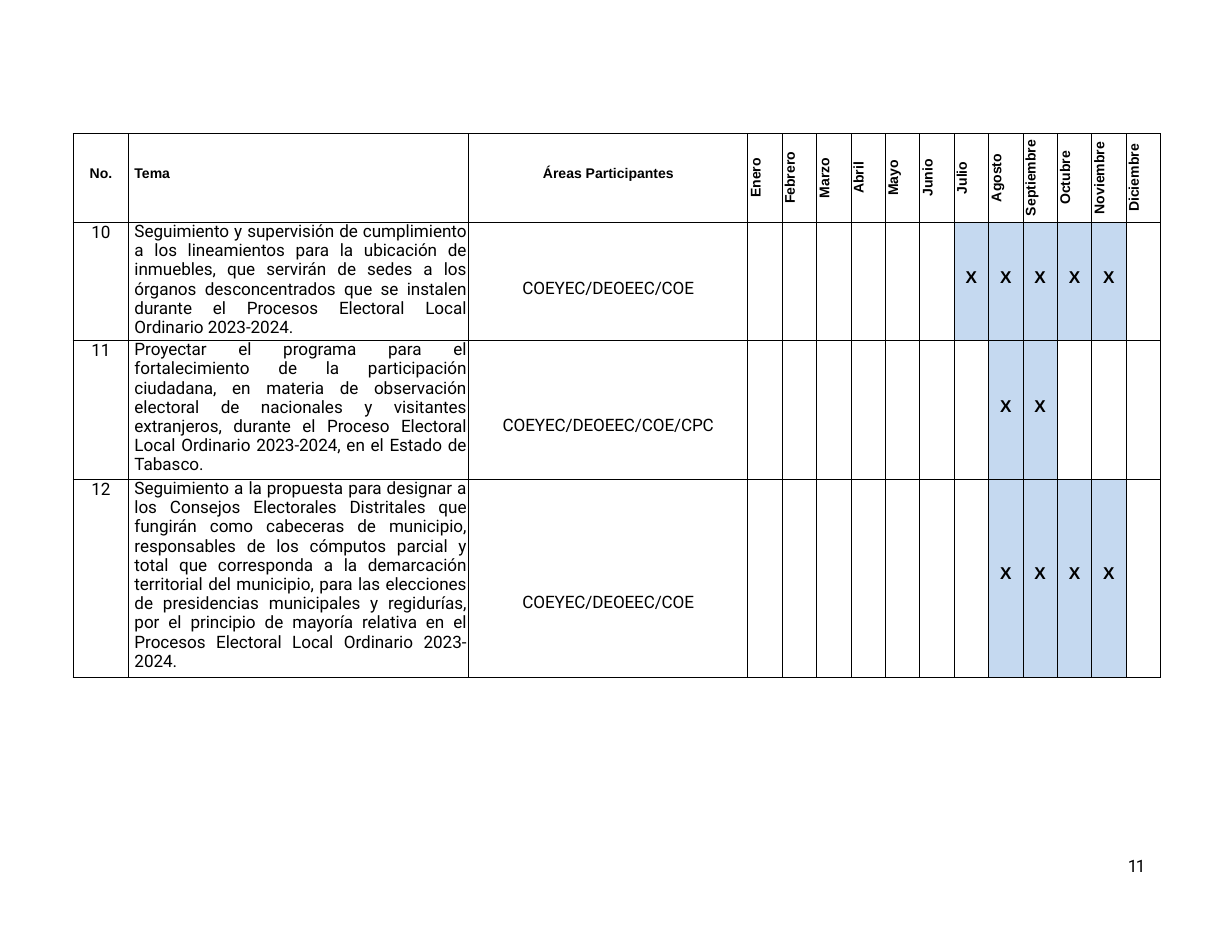
from lxml import etree
from pptx import Presentation
from pptx.dml.color import RGBColor
from pptx.enum.text import MSO_ANCHOR, MSO_AUTO_SIZE, PP_ALIGN
from pptx.oxml.ns import qn
from pptx.util import Cm, Pt

TOP, MIDDLE = MSO_ANCHOR.TOP, MSO_ANCHOR.MIDDLE
LEFT, CENTER, JUSTIFY = PP_ALIGN.LEFT, PP_ALIGN.CENTER, PP_ALIGN.JUSTIFY

COLORS = {"ink": "000000", "active": "C5D9F0"}
HEAD_FONT, BODY_FONT = "Arial", "Roboto"
INDENT = 0.13

MONTHS = ["Enero", "Febrero", "Marzo", "Abril", "Mayo", "Junio", "Julio",
          "Agosto", "Septiembre", "Octubre", "Noviembre", "Diciembre"]
COL_WIDTHS = [1.26, 7.71, 6.33] + [0.78] * len(MONTHS)
HEAD_HEIGHT = 2.01

# Each topic: number, text, areas, active months, row height,
# top inset of the areas cell, bottom inset of the marks
TOPICS = [
    ("10", "Seguimiento y supervisión de cumplimiento a los lineamientos para "
     "la ubicación de inmuebles, que servirán de sedes a los órganos "
     "desconcentrados que se instalen durante el Procesos Electoral Local "
     "Ordinario 2023-2024.",
     "COEYEC/DEOEEC/COE", MONTHS[6:11], 2.68, 0.33, 0.15),
    ("11", "Proyectar el programa para el fortalecimiento de la participación "
     "ciudadana, en materia de observación electoral de nacionales y "
     "visitantes extranjeros, durante el Proceso Electoral Local Ordinario "
     "2023-2024, en el Estado de Tabasco.",
     "COEYEC/DEOEEC/COE/CPC", MONTHS[7:9], 3.15, 0.73, 0.15),
    ("12", "Seguimiento a la propuesta para designar a los Consejos "
     "Electorales Distritales que fungirán como cabeceras de municipio, "
     "responsables de los cómputos parcial y total que corresponda a la "
     "demarcación territorial del municipio, para las elecciones de "
     "presidencias municipales y regidurías, por el principio de mayoría "
     "relativa en el Procesos Electoral Local Ordinario 2023-2024.",
     "COEYEC/DEOEEC/COE", MONTHS[7:11], 4.49, 1.09, 0.23),
]


def write(tf, text, font=BODY_FONT, size=11, bold=False, align=LEFT,
          line=None, spc=None):
    p = tf.paragraphs[0]
    p.alignment = align
    if line:
        p.line_spacing = line
    r = p.add_run()
    r.text = text
    r.font.name, r.font.size, r.font.bold = font, Pt(size), bold
    r.font.color.rgb = RGBColor.from_string(COLORS["ink"])
    if spc is not None:
        r.font._element.set("spc", str(round(spc * 100)))


def set_borders(cell, first):
    tcPr = cell._tc.get_or_add_tcPr()
    for side in ("lnL", "lnR", "lnT", "lnB"):
        width = 0.75 if first and side == "lnL" else 0.5
        ln = etree.SubElement(tcPr, qn("a:" + side), w=str(Pt(width)))
        fill = etree.SubElement(ln, qn("a:solidFill"))
        etree.SubElement(fill, qn("a:srgbClr"), val=COLORS["ink"])


def set_cell(cell, text="", anchor=MIDDLE, insets=(0, 0, 0, 0), fill=None,
             vert=None, **fmt):
    """Insets are left, top, right, bottom in centimetres."""
    (cell.margin_left, cell.margin_top,
     cell.margin_right, cell.margin_bottom) = map(Cm, insets)
    cell.vertical_anchor = anchor
    if fill:
        cell.fill.solid()
        cell.fill.fore_color.rgb = RGBColor.from_string(COLORS[fill])
    else:
        cell.fill.background()
    if vert:
        cell._tc.get_or_add_tcPr().set("vert", vert)
    if text:
        write(cell.text_frame, text, **fmt)


def fill_header(cells):
    head = {"font": HEAD_FONT, "size": 9, "bold": True}
    set_cell(cells[0], "No.", insets=(0, 0, 0, 0.18), align=CENTER, **head)
    set_cell(cells[1], "Tema", insets=(INDENT, 0, 0, 0.18), **head)
    set_cell(cells[2], "Áreas Participantes", insets=(0, 0, 0, 0.18),
             align=CENTER, **head)
    for cell, month in zip(cells[3:], MONTHS):
        set_cell(cell, month, vert="vert270", align=CENTER, **head)


def fill_topic(cells, number, topic, areas, active, area_top, mark_bottom):
    set_cell(cells[0], number, anchor=TOP, align=CENTER, line=Pt(12.9))
    set_cell(cells[1], topic, anchor=TOP, insets=(INDENT, 0, 0.05, 0),
             align=JUSTIFY, line=0.96, spc=-0.05)
    set_cell(cells[2], areas, insets=(0, area_top, 0, 0), align=CENTER,
             spc=-0.1)
    for cell, month in zip(cells[3:], MONTHS):
        if month in active:
            set_cell(cell, "X", insets=(0, 0, 0, mark_bottom), fill="active",
                     font=HEAD_FONT, bold=True, align=CENTER)
        else:
            set_cell(cell)


def add_schedule(slide, x, y):
    heights = [HEAD_HEIGHT] + [topic[4] for topic in TOPICS]
    table = slide.shapes.add_table(
        len(heights), len(COL_WIDTHS), Cm(x), Cm(y),
        Cm(sum(COL_WIDTHS)), Cm(sum(heights))).table
    table.first_row = table.horz_banding = False
    for col, width in zip(table.columns, COL_WIDTHS):
        col.width = Cm(width)
    for row, height in zip(table.rows, heights):
        row.height = Cm(height)
        for i, cell in enumerate(row.cells):
            set_borders(cell, first=i == 0)

    rows = [list(row.cells) for row in table.rows]
    fill_header(rows[0])
    for cells, topic in zip(rows[1:], TOPICS):
        number, text, areas, active, _, area_top, mark_bottom = topic
        fill_topic(cells, number, text, areas, active, area_top, mark_bottom)


def add_page_number(slide, x, y, w, h, text):
    tf = slide.shapes.add_textbox(Cm(x), Cm(y), Cm(w), Cm(h)).text_frame
    tf.word_wrap = True
    tf.auto_size = MSO_AUTO_SIZE.SHAPE_TO_FIT_TEXT
    tf.margin_top = tf.margin_right = tf.margin_bottom = 0
    tf.margin_left = Cm(0.1)
    write(tf, text, spc=-1.1)


def main():
    prs = Presentation()
    prs.slide_width, prs.slide_height = Cm(27.94), Cm(21.59)
    slide = prs.slides.add_slide(prs.slide_layouts[6])

    # Yearly schedule
    add_schedule(slide, 1.66, 3.03)
    # Footer
    add_page_number(slide, 25.48, 19.41, 0.56, 0.51, "11")

    prs.save("out.pptx")


if __name__ == "__main__":
    main()
